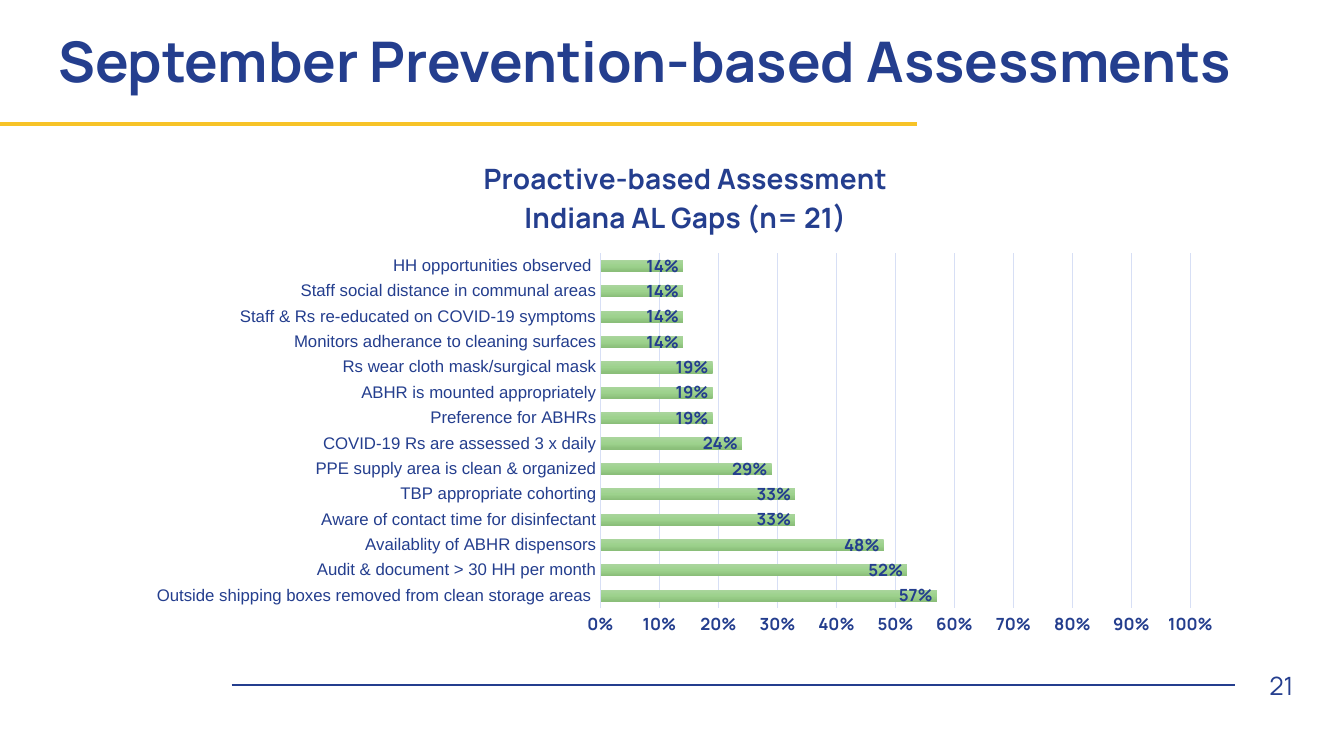
from lxml.etree import SubElement
from pptx import Presentation
from pptx.chart.data import CategoryChartData
from pptx.dml.color import RGBColor
from pptx.enum.chart import XL_CHART_TYPE as ChartType, XL_LABEL_POSITION as LabelPosition
from pptx.enum.chart import XL_TICK_MARK as TickMark
from pptx.enum.shapes import MSO_CONNECTOR as Connector
from pptx.enum.text import MSO_ANCHOR as Anchor, PP_ALIGN as Align
from pptx.oxml import parse_xml
from pptx.oxml.ns import nsdecls, qn
from pptx.util import Cm, Pt

NAVY = RGBColor(0x24, 0x3E, 0x8E)
GOLD = RGBColor(0xF7, 0xC3, 0x27)
PALE_BLUE = RGBColor(0xD7, 0xDF, 0xF5)
DARK_GREENS = [(0, RGBColor(0x74, 0xB3, 0x5C)), (50, RGBColor(0x5E, 0xAD, 0x38)),
               (100, RGBColor(0x52, 0x9F, 0x2D))]
LIGHT_GREENS = [(0, RGBColor(0xAA, 0xD5, 0x9D)), (50, RGBColor(0x9D, 0xD2, 0x8D)),
                (100, RGBColor(0x8A, 0xBE, 0x79))]
HEADING_FONT = "Manrope"
LABEL_FONT = "Arial"

GAPS = [
    ("Outside shipping boxes removed from clean storage areas ", 0.57),
    ("Audit & document > 30 HH per month", 0.52),
    ("Availablity of ABHR dispensors", 0.48),
    ("Aware of contact time for disinfectant", 0.33),
    ("TBP appropriate cohorting", 0.33),
    ("PPE supply area is clean & organized", 0.29),
    ("COVID-19 Rs are assessed 3 x daily", 0.24),
    ("Preference for ABHRs", 0.19),
    ("ABHR is mounted appropriately", 0.19),
    ("Rs wear cloth mask/surgical mask", 0.19),
    ("Monitors adherance to cleaning surfaces", 0.14),
    ("Staff & Rs re-educated on COVID-19 symptoms", 0.14),
    ("Staff social distance in communal areas", 0.14),
    ("HH opportunities observed ", 0.14),
]


def format_font(font, size, name=HEADING_FONT, bold=False):
    font.size = Pt(size)
    font.name = name
    font.bold = bold
    font.color.rgb = NAVY


def add_text(slide, text, left, top, width, height, size, bold=False,
             align=Align.LEFT, line_spacing=1.0):
    shape = slide.shapes.add_textbox(Cm(left), Cm(top), Cm(width), Cm(height))
    frame = shape.text_frame
    frame.word_wrap = True
    frame.vertical_anchor = Anchor.MIDDLE
    paragraph = frame.paragraphs[0]
    paragraph.text = text
    paragraph.alignment = align
    paragraph.line_spacing = line_spacing
    format_font(paragraph.font, size, bold=bold)


def add_rule(slide, left, top, width, color, weight):
    line = slide.shapes.add_connector(
        Connector.STRAIGHT, Cm(left), Cm(top), Cm(left + width), Cm(top))
    line.line.color.rgb = color
    line.line.width = Pt(weight)
    SubElement(line._element.spPr, qn("a:effectLst"))


def add_header(slide, left, top, width, height):
    add_text(slide, "September Prevention-based Assessments", left + 1.22, top + 0.58,
             width - 1.99, 2.11, size=40, bold=True, line_spacing=0.9)
    add_rule(slide, left, top + height, 23.1, GOLD, 3)


def add_footer(slide, left, top, width, height):
    number_width = 1.73
    rule_width = width - number_width
    add_rule(slide, left, top + height / 2, rule_width, NAVY, 1)
    add_text(slide, "21", left + rule_width, top, number_width, height,
             size=18, align=Align.RIGHT)


def manual_layout(x, y, width=None, height=None):
    sizes = ""
    target = ""
    if width is not None:
        target = '<c:layoutTarget val="inner"/>'
        sizes = f'<c:w val="{width}"/><c:h val="{height}"/>'
    return parse_xml(
        f'<c:layout {nsdecls("c")}><c:manualLayout>{target}'
        '<c:xMode val="edge"/><c:yMode val="edge"/>'
        f'<c:x val="{x}"/><c:y val="{y}"/>{sizes}</c:manualLayout></c:layout>')


def place_layout(parent, layout, position):
    for old_layout in parent.findall(qn("c:layout")):
        parent.remove(old_layout)
    parent.insert(position, layout)


def fill_gradient(series, colors):
    stops = "".join(f'<a:gs pos="{position * 1000}"><a:srgbClr val="{color}"/></a:gs>'
                    for position, color in colors)
    properties = series.format.fill._xPr
    properties.insert(0, parse_xml(
        f'<a:gradFill {nsdecls("a")} rotWithShape="1"><a:gsLst>{stops}</a:gsLst>'
        '<a:lin ang="5400000" scaled="0"/></a:gradFill>'))


def format_title(chart):
    frame = chart.chart_title.text_frame
    frame.text = "Proactive-based Assessment\nIndiana AL Gaps (n= 21)"
    for paragraph in frame.paragraphs:
        format_font(paragraph.font, 20, bold=True)
        format_font(paragraph.runs[0].font, 20, bold=True)
    chart.chart_title.include_in_layout = False
    place_layout(chart.chart_title._element, manual_layout(0.314, 0.03), 1)


def format_axes(chart):
    categories = chart.category_axis
    values = chart.value_axis
    for axis in (categories, values):
        axis.major_tick_mark = TickMark.NONE
        axis.minor_tick_mark = TickMark.NONE
    format_font(categories.tick_labels.font, 12, name=LABEL_FONT)
    categories.format.line.color.rgb = PALE_BLUE
    categories.format.line.width = Pt(1)
    format_font(values.tick_labels.font, 12, bold=True)
    values.tick_labels.number_format = "0%"
    values.tick_labels.number_format_is_linked = False
    values.format.line.fill.background()
    values.minimum_scale = 0
    values.maximum_scale = 1
    values.major_unit = 0.1
    values.major_gridlines.format.line.color.rgb = PALE_BLUE
    values.major_gridlines.format.line.width = Pt(0.75)


def add_gap_chart(slide, left, top, width, height):
    data = CategoryChartData(number_format="0%")
    data.categories = [name for name, share in GAPS]
    data.add_series("Series 1", [])
    data.add_series("Series 2", [share for name, share in GAPS])
    chart = slide.shapes.add_chart(ChartType.BAR_CLUSTERED, Cm(left), Cm(top),
                                   Cm(width), Cm(height), data).chart
    format_font(chart.font, 10, name=LABEL_FONT)
    chart.has_legend = False
    format_title(chart)
    format_axes(chart)
    plot = chart.plots[0]
    plot.gap_width = 115
    plot.overlap = -20
    plot.vary_by_categories = False
    empty_series, gap_series = plot.series
    fill_gradient(empty_series, DARK_GREENS)
    fill_gradient(gap_series, LIGHT_GREENS)
    empty_element = empty_series._element
    empty_element.remove(empty_element.find(qn("c:val")))
    labels = gap_series.data_labels
    labels.show_value = True
    labels.position = LabelPosition.INSIDE_END
    labels.number_format = "0%"
    labels.number_format_is_linked = False
    format_font(labels.font, 12, bold=True)
    plot_area = chart._chartSpace.chart.plotArea
    place_layout(plot_area, manual_layout(0.423, 0.225, 0.536, 0.702), 0)


def main():
    presentation = Presentation()
    presentation.slide_width = Cm(33.87)
    presentation.slide_height = Cm(19.05)
    slide = presentation.slides.add_slide(presentation.slide_layouts[6])
    add_header(slide, 0, 0, 33.87, 3.12)
    add_gap_chart(slide, 3.4, 3.51, 27.74, 12.75)
    add_footer(slide, 5.84, 16.75, 27.01, 1.02)
    presentation.save("out.pptx")


if __name__ == "__main__":
    main()
